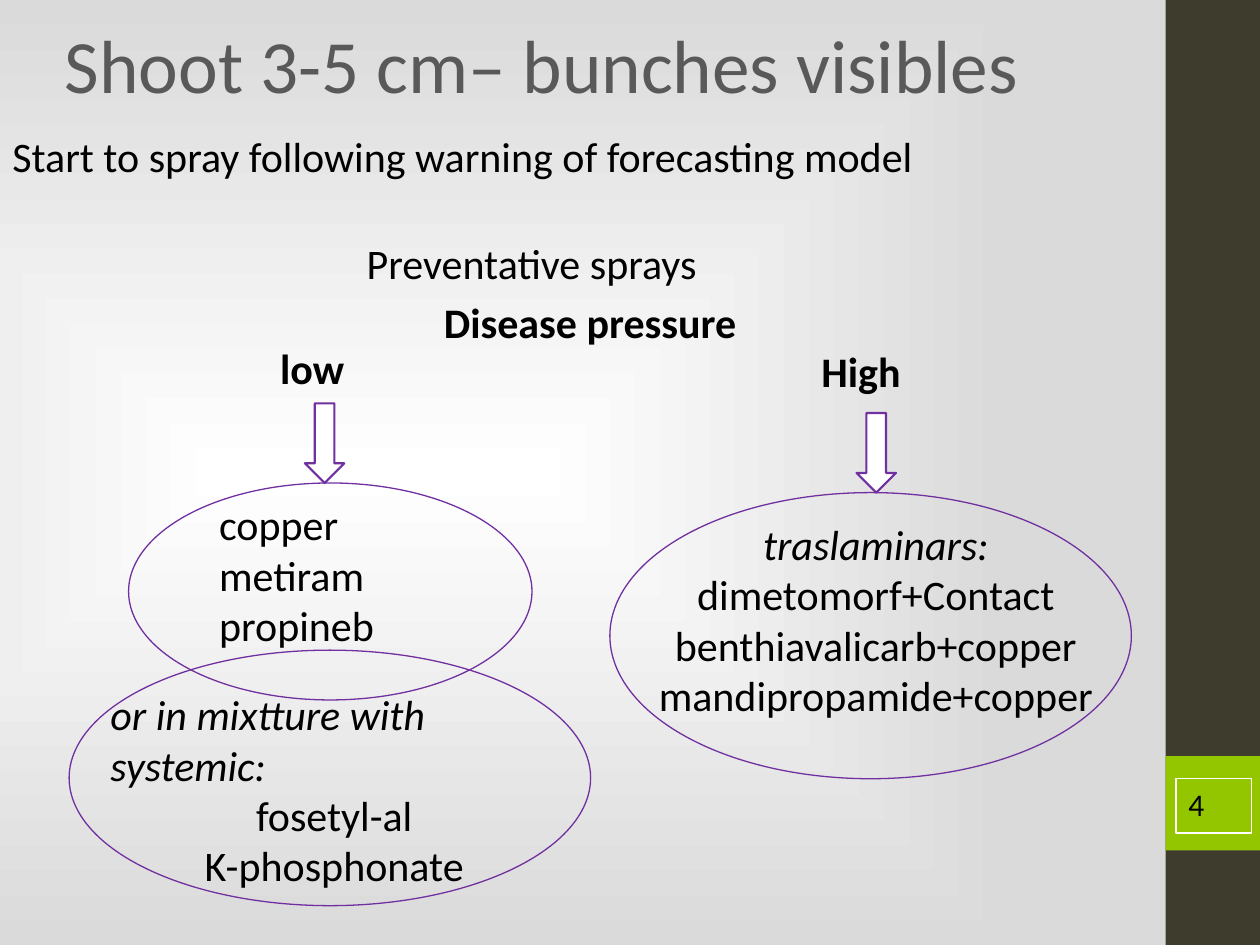
import pptx
import pptx.util
import pptx.dml.color
import pptx.enum.shapes
import pptx.enum.text
import pptx.oxml
import pptx.oxml.ns

Pt = pptx.util.Pt
SHAPE = pptx.enum.shapes.MSO_SHAPE
ALIGN = pptx.enum.text.PP_ALIGN
ANCHOR = pptx.enum.text.MSO_ANCHOR

COLOURS = {
    "text": "000000", "title": "595959", "outline": "7030A0",
    "white": "FFFFFF", "grey": "DADADA", "band": "3E3D2D", "accent": "94C600",
}


class SlideBuilder:
    font_name = "Calibri"
    text_size = 24
    tight = 0.93

    def __init__(self, slide):
        self.slide = slide

    def colour(self, name):
        return pptx.dml.color.RGBColor.from_string(COLOURS[name])

    def background(self, inner, outer):
        """Fill the slide with a gradient that spreads from left of centre."""
        self.slide.background.fill.gradient()
        gradient = next(self.slide.element.iter(pptx.oxml.ns.qn("a:gradFill")))
        for child in list(gradient):
            gradient.remove(child)
        template = pptx.oxml.parse_xml(
            f'<a:gradFill {pptx.oxml.ns.nsdecls("a")}><a:gsLst>'
            f'<a:gs pos="0"><a:srgbClr val="{COLOURS[inner]}"/></a:gs>'
            f'<a:gs pos="100000"><a:srgbClr val="{COLOURS[outer]}"/></a:gs>'
            '</a:gsLst><a:path path="shape">'
            '<a:fillToRect l="30000" t="50000" r="70000" b="50000"/>'
            '</a:path></a:gradFill>')
        for child in list(template):
            gradient.append(child)

    def shape(self, kind, box, fill=None, line=None, width=0.75):
        shape = self.slide.shapes.add_shape(kind, *map(Pt, box))
        shape.shadow.inherit = False
        if fill:
            shape.fill.solid()
            shape.fill.fore_color.rgb = self.colour(fill)
        else:
            shape.fill.background()
        if line:
            shape.line.color.rgb = self.colour(line)
            shape.line.width = Pt(width)
        else:
            shape.line.fill.background()
        return shape

    def set_text(self, shape, lines, size=text_size, colour="text", align=ALIGN.LEFT,
                 spacing=1.0, bold=False, italic_first=False, anchor=ANCHOR.TOP):
        frame = shape.text_frame
        frame.word_wrap = True
        frame.auto_size = pptx.enum.text.MSO_AUTO_SIZE.NONE
        frame.vertical_anchor = anchor
        frame.text = "\n".join(lines)
        for index, paragraph in enumerate(frame.paragraphs):
            paragraph.alignment = align
            paragraph.line_spacing = spacing
            paragraph.space_before = Pt(0)
            for run in paragraph.runs:
                run.font.name = self.font_name
                run.font.size = Pt(size)
                run.font.bold = bold
                run.font.italic = italic_first and index == 0
                run.font.color.rgb = self.colour(colour)
        return shape

    def text(self, box, lines, **style):
        return self.set_text(self.slide.shapes.add_textbox(*map(Pt, box)), lines, **style)

    def placeholder(self, index, box, lines, **style):
        shape = self.slide.placeholders[index]
        shape.left, shape.top, shape.width, shape.height = map(Pt, box)
        self.set_text(shape, lines, **style)
        if index:
            # Plain list lines: no bullet, no indent
            for paragraph in shape.text_frame.paragraphs:
                properties = paragraph._p.get_or_add_pPr()
                properties.set("marL", "0")
                properties.set("indent", "0")
                properties.append(pptx.oxml.parse_xml(
                    f'<a:buNone {pptx.oxml.ns.nsdecls("a")}/>'))
        return shape

    def heading(self, box, line, align=ALIGN.CENTER, bold=False):
        return self.text(box, [line], align=align, bold=bold, spacing=self.tight)

    def arrow(self, left, top):
        return self.shape(SHAPE.DOWN_ARROW, (left, top, 22.5, 45.5),
                          "white", "outline", 1.25)

    def ellipse(self, box):
        return self.shape(SHAPE.OVAL, box, line="outline")


def main():
    presentation = pptx.Presentation()
    presentation.slide_width, presentation.slide_height = Pt(720), Pt(540)
    two_content = presentation.slide_layouts[3]
    builder = SlideBuilder(presentation.slides.add_slide(two_content))

    # Background and side band
    builder.background("white", "grey")
    builder.shape(SHAPE.RECTANGLE, (666, 0, 54, 540), "band")
    builder.shape(SHAPE.RECTANGLE, (666, 432, 54, 54), "accent")

    # Title and headings
    builder.placeholder(0, (0, 11.5, 618.5, 55.5), ["Shoot 3-5 cm– bunches visibles"],
                        size=43, colour="title", align=ALIGN.CENTER,
                        spacing=builder.tight)
    builder.heading((0, 73.5, 652, 34.5),
                    "Start to spray following warning of forecasting model",
                    align=ALIGN.LEFT)
    builder.heading((28, 134.5, 551.5, 34.5), "Preventative sprays")
    builder.heading((44.5, 168.5, 585.5, 34.5), "Disease pressure", bold=True)

    # Low pressure
    builder.heading((153, 194.5, 80, 34.5), "low", align=ALIGN.LEFT, bold=True)
    builder.arrow(174.25, 230.5)
    builder.ellipse((39.5, 371.5, 298, 146))
    mixture = builder.text(
        (56, 390, 270, 124),
        ["or in mixtture with systemic:", "fosetyl-al", "K-phosphonate"],
        align=ALIGN.CENTER, italic_first=True)
    mixture.text_frame.paragraphs[0].alignment = ALIGN.LEFT
    builder.placeholder(1, (118, 281.5, 135.5, 124), ["copper", "metiram", "propineb"])
    builder.ellipse((73.5, 276, 230.5, 124))

    # High pressure
    builder.heading((444, 196.5, 96, 34.5), "High", bold=True)
    builder.arrow(489.5, 236)
    builder.placeholder(2, (365.5, 292.5, 270, 124),
                        ["traslaminars:", "dimetomorf+Contact",
                         "benthiavalicarb+copper", "mandipropamide+copper"],
                        align=ALIGN.CENTER, italic_first=True)
    builder.ellipse((348.5, 281.5, 298, 163.5))

    # Slide number
    number = builder.shape(SHAPE.RECTANGLE, (672, 445, 43, 31), line="white")
    builder.set_text(number, ["4"], size=18)

    presentation.save("out.pptx")


if __name__ == "__main__":
    main()
